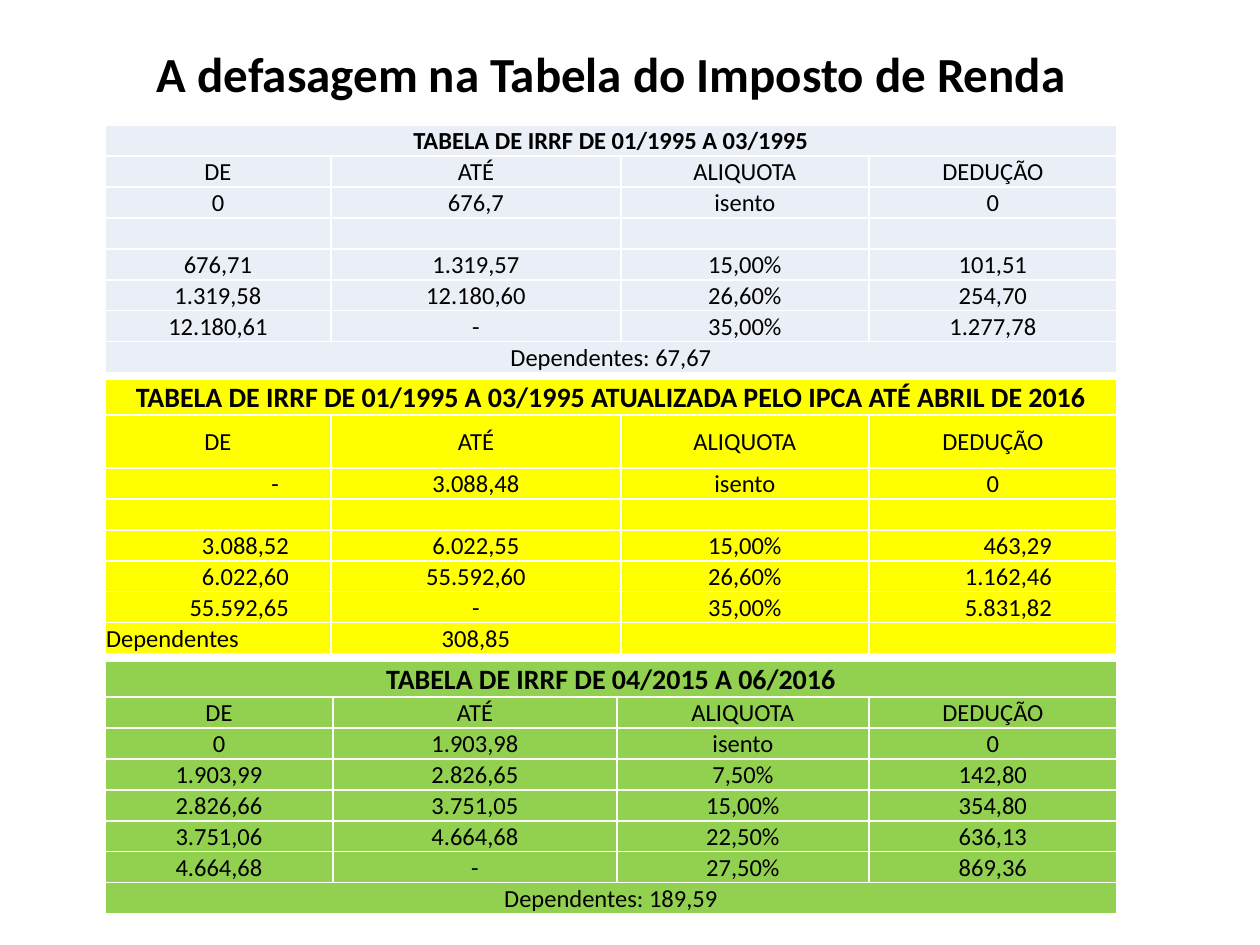
from lxml.etree import SubElement
from pptx import Presentation
from pptx.dml.color import RGBColor
from pptx.enum.text import MSO_ANCHOR as Anchor, MSO_AUTO_SIZE as AutoSize, PP_ALIGN as Align
from pptx.oxml import parse_xml
from pptx.oxml.ns import nsdecls, qn
from pptx.util import Pt

PX = 914400 // 126
LEFT, WIDTH = 105, 1012
HEADINGS = ["DE", "ATÉ", "ALIQUOTA", "DEDUÇÃO"]
BLANK = [""] * 4


def px(length):
    return length * PX


def color(value):
    return RGBColor.from_string(value)


def write_text(text_frame, text, size=14, bold=False, align=Align.CENTER, font="Calibri", ink="000000"):
    paragraph = text_frame.paragraphs[0]
    paragraph.alignment = align
    if not text:
        SubElement(paragraph._p, qn("a:endParaRPr"), sz=str(size * 100))
        return
    run = paragraph.add_run()
    run.text = text
    run.font.name = font
    run.font.size = Pt(size)
    run.font.bold = bold
    run.font.color.rgb = color(ink)


class SlideBuilder:
    border = "FFFFFF"

    def __init__(self, presentation):
        self.slide = presentation.slides.add_slide(presentation.slide_layouts[5])

    def title(self, text, top, height):
        shape = self.slide.shapes.title
        shape.left, shape.top, shape.width, shape.height = map(px, (LEFT, top, WIDTH, height))
        text_frame = shape.text_frame
        text_frame.auto_size = AutoSize.SHAPE_TO_FIT_TEXT
        text_frame.vertical_anchor = Anchor.MIDDLE
        write_text(text_frame, text, size=28, bold=True)

    def cell(self, cell, text, fill, indent=None, **text_format):
        cell.fill.solid()
        cell.fill.fore_color.rgb = color(fill)
        cell.vertical_anchor = Anchor.MIDDLE
        cell.margin_left = cell.margin_top = px(1)
        cell.margin_right = px(indent or 1)
        cell.margin_bottom = 0
        if indent:
            text_format["align"] = Align.RIGHT
        write_text(cell.text_frame, text, **text_format)
        properties = cell._tc.get_or_add_tcPr()
        for position, side in enumerate("LRTB"):
            properties.insert(position, parse_xml(
                f'<a:ln{side} {nsdecls("a")} w="12700"><a:solidFill>'
                f'<a:srgbClr val="{self.border}"/></a:solidFill></a:ln{side}>'))

    def tax_table(self, top, fill, title, brackets, footer, columns, heights, title_size=16, indents=None):
        rows = [[title, "", "", ""], HEADINGS, *brackets, footer]
        frame = self.slide.shapes.add_table(
            len(rows), len(columns), px(LEFT), px(top), px(sum(columns)), px(sum(heights)))
        table = frame.table
        table.first_row = table.horz_banding = False
        for column, width in zip(table.columns, columns):
            column.width = px(width)
        for row, height in zip(table.rows, heights):
            row.height = px(height)
        for r, values in enumerate(rows):
            for c, text in enumerate(values):
                text_format = {"size": title_size, "bold": True} if r == 0 else {}
                if text == "Dependentes":
                    text_format["align"] = Align.LEFT
                self.cell(table.cell(r, c), text, fill, (indents or {}).get((r, c)), **text_format)
            if not any(values[1:]) and values[0]:
                table.cell(r, 0).merge(table.cell(r, len(columns) - 1))


def main():
    presentation = Presentation()
    presentation.slide_width, presentation.slide_height = px(1260), px(945)
    builder = SlideBuilder(presentation)
    builder.title("A defasagem na Tabela do Imposto de Renda", 37, 72)

    columns = [226, 290, 248, 248]
    builder.tax_table(
        125, "EAEFF7", "TABELA DE IRRF DE 01/1995 A 03/1995",
        [["0", "676,7", "isento", "0"],
         BLANK,
         ["676,71", "1.319,57", "15,00%", "101,51"],
         ["1.319,58", "12.180,60", "26,60%", "254,70"],
         ["12.180,61", "-", "35,00%", "1.277,78"]],
        ["Dependentes: 67,67", "", "", ""],
        columns, [31] * 8, title_size=14)

    indents = {(row, column): indent for row in (4, 5, 6) for column, indent in ((0, 42), (3, 65))}
    builder.tax_table(
        379, "FFFF00", "TABELA DE IRRF DE 01/1995 A 03/1995 ATUALIZADA PELO IPCA ATÉ ABRIL DE 2016",
        [["-", "3.088,48", "isento", "0"],
         BLANK,
         ["3.088,52", "6.022,55", "15,00%", "463,29"],
         ["6.022,60", "55.592,60", "26,60%", "1.162,46"],
         ["55.592,65", "-", "35,00%", "5.831,82"]],
        ["Dependentes", "308,85", "", ""],
        columns, [36, 53] + [31] * 6, indents={(2, 0): 52, **indents})

    builder.tax_table(
        661, "92D050", "TABELA DE IRRF DE 04/2015 A 06/2016",
        [["0", "1.903,98", "isento", "0"],
         ["1.903,99", "2.826,65", "7,50%", "142,80"],
         ["2.826,66", "3.751,05", "15,00%", "354,80"],
         ["3.751,06", "4.664,68", "22,50%", "636,13"],
         ["4.664,68", "-", "27,50%", "869,36"]],
        ["Dependentes: 189,59", "", "", ""],
        [228, 284, 252, 248], [36] + [31] * 7)

    presentation.save("out.pptx")


if __name__ == "__main__":
    main()
